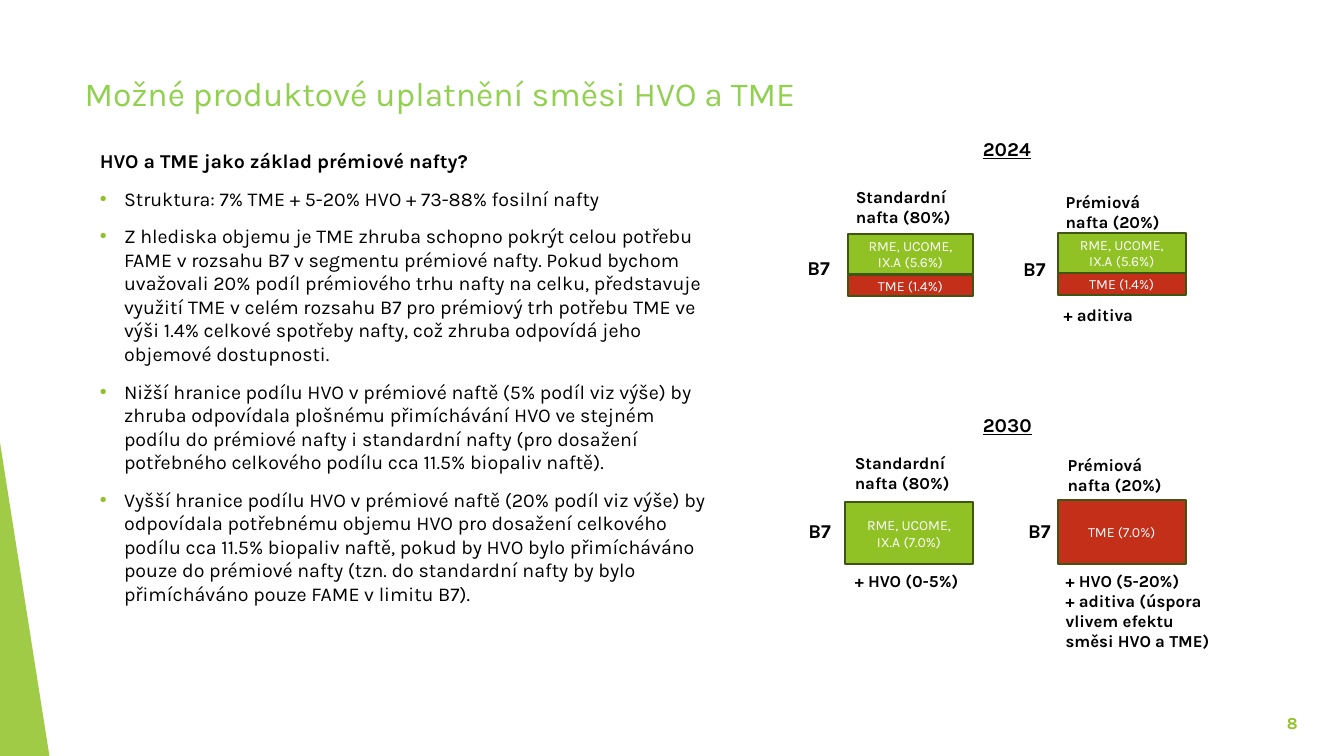
from lxml import etree
from pptx import Presentation
from pptx import util as u
from pptx.dml.color import RGBColor
from pptx.enum import shapes, text
from pptx.oxml.ns import qn

PX = 9144
FONT = "Karla"
GREEN = RGBColor(0x90, 0xC2, 0x26)
TITLE_GREEN = RGBColor(0x92, 0xD0, 0x50)
RED = RGBColor(0xC4, 0x2F, 0x1A)
OUTLINE = RGBColor(0x3F, 0x55, 0x11)
BLACK = RGBColor(0, 0, 0)
WHITE = RGBColor(0xFF, 0xFF, 0xFF)


def write(shape, lines, size, color, bold=False, align=text.PP_ALIGN.LEFT,
          anchor=text.MSO_ANCHOR.TOP):
    frame = shape.text_frame
    frame.text = "\n".join(lines)
    frame.word_wrap = True
    frame.auto_size = text.MSO_AUTO_SIZE.NONE
    frame.vertical_anchor = anchor
    for paragraph in frame.paragraphs:
        paragraph.alignment = align
        font = paragraph.font
        font.name, font.size, font.bold = FONT, u.Pt(size), bold
        font.color.rgb = color
    return frame


def place(shape, *box):
    shape.left, shape.top, shape.width, shape.height = [n * PX for n in box]


prs = Presentation()
prs.slide_width, prs.slide_height = 1333 * PX, 750 * PX
slide = prs.slides.add_slide(prs.slide_layouts[1])

accent = slide.shapes.add_shape(shapes.MSO_SHAPE.ISOSCELES_TRIANGLE,
                                0, 439 * PX, 49 * PX, 311 * PX)
accent.adjustments[0] = 0
accent.shadow.inherit = False
accent.fill.solid()
accent.fill.fore_color.rgb = GREEN
accent.line.fill.background()
accent_color = accent.fill._xPr.find(".//" + qn("a:srgbClr"))
etree.SubElement(accent_color, qn("a:alpha"), val="85000")

title = slide.shapes.title
place(title, 74, 67, 1148, 82)
write(title, ["Možné produktové uplatnění směsi HVO a TME"], 24, TITLE_GREEN,
      align=text.PP_ALIGN.JUSTIFY)

arguments = slide.placeholders[1]
place(arguments, 89, 143, 623, 271)
argument_frame = write(arguments, [
    "HVO a TME jako základ prémiové nafty?",
    "Struktura: 7% TME + 5-20% HVO + 73-88% fosilní nafty",
    "Z hlediska objemu je TME zhruba schopno pokrýt celou potřebu FAME v rozsahu B7 "
    "v segmentu prémiové nafty. Pokud bychom uvažovali 20% podíl prémiového trhu nafty "
    "na celku, představuje využití TME v celém rozsahu B7 pro prémiový trh potřebu TME "
    "ve výši 1.4% celkové spotřeby nafty, což zhruba odpovídá jeho objemové dostupnosti.",
    "Nižší hranice podílu HVO v prémiové naftě (5% podíl viz výše) by zhruba odpovídala "
    "plošnému přimíchávání HVO ve stejném podílu do prémiové nafty i standardní nafty "
    "(pro dosažení potřebného celkového podílu cca 11.5% biopaliv naftě).",
    "Vyšší hranice podílu HVO v prémiové naftě (20% podíl viz výše) by odpovídala "
    "potřebnému objemu HVO pro dosažení celkového podílu cca 11.5% biopaliv naftě, pokud "
    "by HVO bylo přimícháváno pouze do prémiové nafty (tzn. do standardní nafty by bylo "
    "přimícháváno pouze FAME v limitu B7).",
], 14, BLACK)
for position, paragraph in enumerate(argument_frame.paragraphs):
    paragraph.space_before = u.Pt(10)
    props = paragraph._p.get_or_add_pPr()
    if position == 0:
        paragraph.font.bold = True
        props.set("marL", "0")
        props.set("indent", "0")
        props.insert_element_before(etree.Element(qn("a:buNone")), "a:defRPr")
        continue
    paragraph.level = 1
    props.set("marL", str(24 * PX))
    props.set("indent", str(-24 * PX))
    bullet_color = etree.Element(qn("a:buClr"))
    etree.SubElement(bullet_color, qn("a:srgbClr"), val=str(GREEN))
    for bullet_part in (bullet_color,
                        etree.Element(qn("a:buFont"), typeface="Arial"),
                        etree.Element(qn("a:buChar"), char="•")):
        props.insert_element_before(bullet_part, "a:defRPr")

blends = [
    (841, 273, 124, 21, RED, "TME (1.4%)"),
    (841, 232, 124, 40, GREEN, "RME, UCOME, IX.A (5.6%)"),
    (1049, 271, 127, 22, RED, "TME (1.4%)"),
    (1049, 231, 127, 40, GREEN, "RME, UCOME, IX.A (5.6%)"),
    (838, 498, 127, 62, GREEN, "RME, UCOME, IX.A (7.0%)"),
    (1049, 496, 127, 64, RED, "TME (7.0%)"),
]
for *box, color, share in blends:
    blend = slide.shapes.add_shape(shapes.MSO_SHAPE.RECTANGLE, *[n * PX for n in box])
    blend.shadow.inherit = False
    blend.fill.solid()
    blend.fill.fore_color.rgb = color
    blend.line.color.rgb = OUTLINE
    blend.line.width = u.Pt(1.5)
    write(blend, [share], 10, WHITE, align=text.PP_ALIGN.CENTER,
          anchor=text.MSO_ANCHOR.MIDDLE)

STANDARD = "Standardní nafta (80%)"
PREMIUM = "Prémiová nafta (20%)"
labels = [
    (839, 180, 127, 50, 12, [STANDARD]),
    (1047, 185, 127, 50, 12, [PREMIUM]),
    (838, 444, 127, 50, 12, [STANDARD]),
    (1049, 446, 127, 50, 12, [PREMIUM]),
    (791, 249, 50, 34, 14, ["B7"]),
    (1005, 250, 50, 34, 14, ["B7"]),
    (792, 510, 77, 34, 14, ["B7"]),
    (1010, 510, 77, 34, 14, ["B7"]),
    (1045, 297, 129, 30, 12, ["+ aditiva"]),
    (838, 561, 126, 50, 12, ["+ HVO (0-5%)"]),
    (1047, 561, 172, 91, 12,
     ["+ HVO (5-20%)", "+ aditiva (úspora vlivem efektu směsi HVO a TME)"]),
]
for *box, size, lines in labels:
    label = slide.shapes.add_textbox(*[n * PX for n in box])
    write(label, lines, size, BLACK, bold=True)

for year, top in (("2024", 131), ("2030", 405)):
    heading = slide.shapes.add_textbox(965 * PX, top * PX, 203 * PX, 34 * PX)
    write(heading, [year], 14, BLACK, bold=True).paragraphs[0].font.underline = True

page_number = slide.shapes.add_textbox(1222 * PX, 697 * PX, 75 * PX, 40 * PX)
write(page_number, ["8"], 12, GREEN, bold=True, align=text.PP_ALIGN.RIGHT,
      anchor=text.MSO_ANCHOR.MIDDLE)

prs.save("out.pptx")
